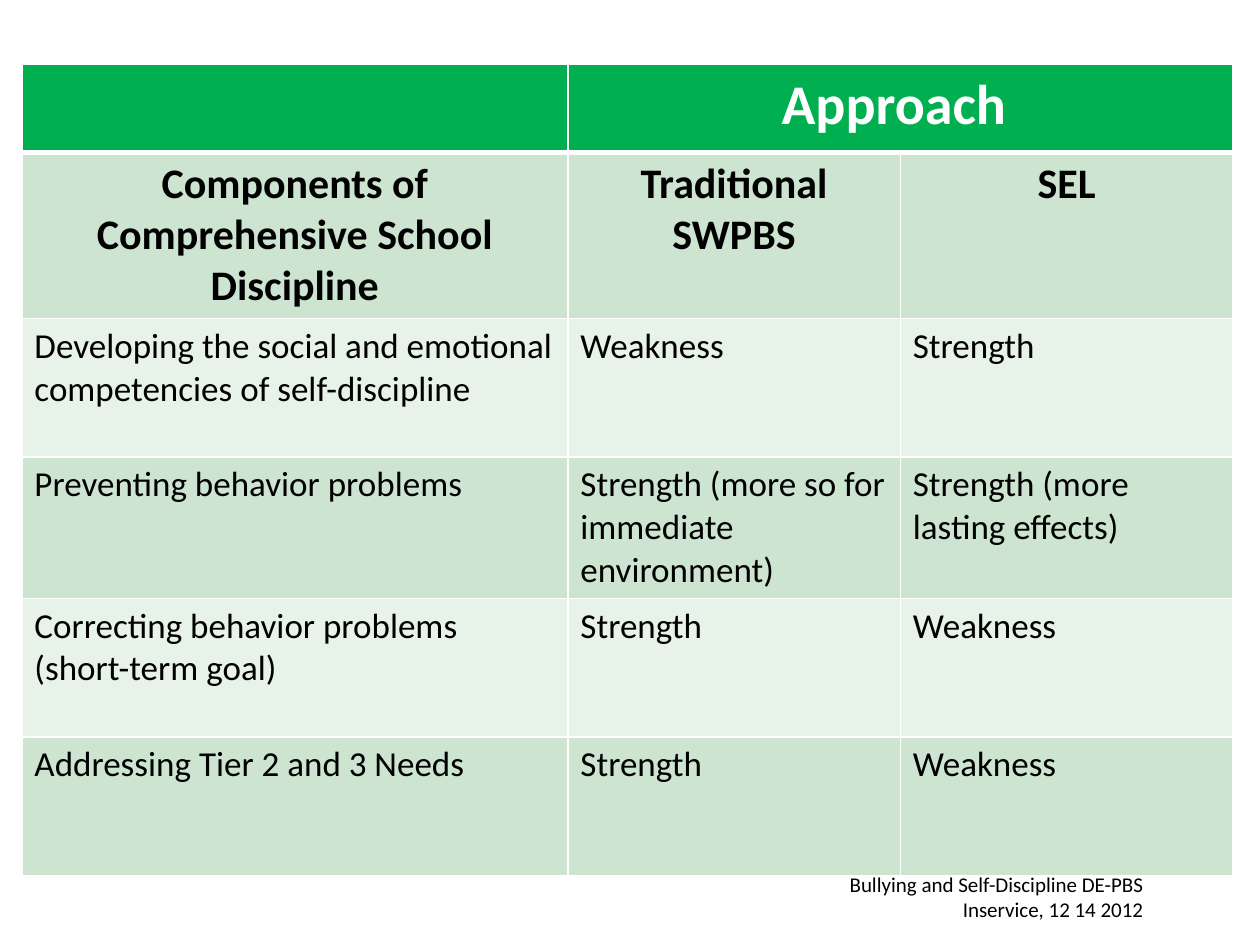
from dataclasses import dataclass

from lxml import etree
from pptx import Presentation
from pptx import util as u
from pptx.dml.color import RGBColor
from pptx.enum import text
from pptx.oxml import ns

GREEN = RGBColor(0x00, 0xB0, 0x50)
MID = RGBColor(0xCC, 0xE4, 0xD0)
PALE = RGBColor(0xE7, 0xF2, 0xE9)
WHITE = RGBColor(0xFF, 0xFF, 0xFF)
BLACK = RGBColor(0x00, 0x00, 0x00)
FONT = "Calibri"
LEFT, CENTER, RIGHT = text.PP_ALIGN.LEFT, text.PP_ALIGN.CENTER, text.PP_ALIGN.RIGHT


@dataclass(frozen=True)
class Style:
    size: float
    color: RGBColor = BLACK
    bold: bool = False
    align: text.PP_ALIGN = LEFT


@dataclass(frozen=True)
class Row:
    height: float
    cells: tuple[str, str, str]
    fill: RGBColor
    style: Style
    bottom: float = 1


HEAD = Style(32, WHITE, True, CENTER)
SUBHEAD = Style(24, BLACK, True, CENTER)
BODY = Style(20)
FOOTER = Style(12, align=RIGHT)

COMPONENTS = (
    ("Developing the social and emotional competencies of self-discipline",
     "Weakness", "Strength"),
    ("Preventing behavior problems",
     "Strength (more so for immediate environment)",
     "Strength (more lasting effects)"),
    ("Correcting behavior problems\n(short-term goal)", "Strength", "Weakness"),
    ("Addressing Tier 2 and 3 Needs", "Strength", "Weakness"),
)
ROWS = [
    Row(50, ("", "Approach ", ""), GREEN, HEAD, 3),
    Row(70.5, ("Components of Comprehensive School Discipline",
               "Traditional\nSWPBS", "SEL"), MID, SUBHEAD),
] + [Row(79.2, cells, (PALE, MID)[i % 2], BODY)
     for i, cells in enumerate(COMPONENTS)]
COLUMNS = (312, 190, 190)


def write(tf, content: str, style: Style) -> None:
    tf.text = content
    for p in tf.paragraphs:
        p.alignment = style.align
        p.font.name = FONT
        p.font.size = u.Pt(style.size)
        p.font.bold = style.bold
        p.font.color.rgb = style.color


def set_borders(cell, top: float, bottom: float) -> None:
    tcPr = cell._tc.get_or_add_tcPr()
    sides = {"lnL": 1, "lnR": 1, "lnT": top, "lnB": bottom}
    for i, (tag, width) in enumerate(sides.items()):
        ln = etree.Element(ns.qn(f"a:{tag}"), w=str(u.Pt(width)))
        fill = etree.SubElement(ln, ns.qn("a:solidFill"))
        etree.SubElement(fill, ns.qn("a:srgbClr"), val=str(WHITE))
        tcPr.insert(i, ln)


def add_grid(s, left: float, top: float, rows: list[Row]) -> None:
    height = sum(row.height for row in rows)
    table = s.shapes.add_table(
        len(rows), len(COLUMNS), u.Pt(left), u.Pt(top),
        u.Pt(sum(COLUMNS)), u.Pt(height)).table
    for column, width in zip(table.columns, COLUMNS):
        column.width = u.Pt(width)
    above = 1
    for r, row in enumerate(rows):
        table.rows[r].height = u.Pt(row.height)
        for c, content in enumerate(row.cells):
            cell = table.cell(r, c)
            write(cell.text_frame, content, row.style)
            cell.fill.solid()
            cell.fill.fore_color.rgb = row.fill
            set_borders(cell, above, row.bottom)
        above = row.bottom
    table.cell(0, 1).merge(table.cell(0, 2))


def add_footer(s, content: str) -> None:
    sp = s.shapes.add_textbox(u.Pt(474), u.Pt(498), u.Pt(186.5), u.Pt(28.8))
    tf = sp.text_frame
    tf.word_wrap = True
    tf.vertical_anchor = text.MSO_ANCHOR.MIDDLE
    write(tf, content, FOOTER)


def main() -> None:
    prs = Presentation()
    prs.slide_width, prs.slide_height = u.Pt(720), u.Pt(540)
    s = prs.slides.add_slide(prs.slide_layouts[6])
    add_grid(s, 12.5, 37, ROWS)
    add_footer(s, "Bullying and Self-Discipline DE-PBS Inservice, 12 14 2012")
    prs.save("out.pptx")


if __name__ == "__main__":
    main()
